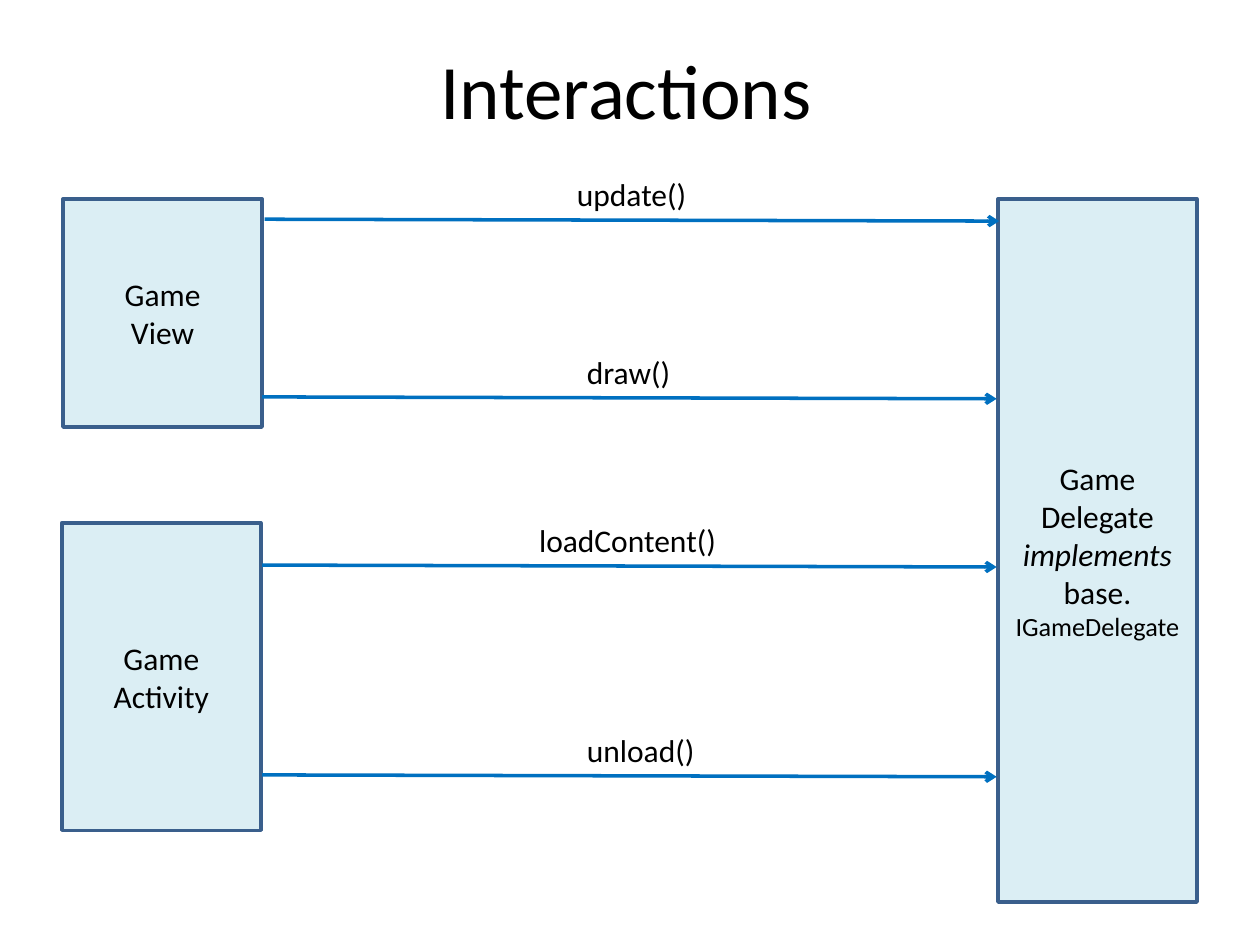
from dataclasses import dataclass

from lxml.etree import SubElement
from pptx import Presentation
from pptx.dml.color import RGBColor
from pptx.enum.shapes import MSO_CONNECTOR, MSO_SHAPE
from pptx.enum.text import MSO_ANCHOR, MSO_AUTO_SIZE, PP_ALIGN
from pptx.oxml.ns import qn
from pptx.slide import Slide
from pptx.text.text import TextFrame
from pptx.util import Inches, Length, Pt


@dataclass(frozen=True)
class Theme:
    font: str = "Calibri"
    ink: RGBColor = RGBColor(0x00, 0x00, 0x00)
    box_fill: RGBColor = RGBColor(0xDB, 0xEE, 0xF4)
    box_line: RGBColor = RGBColor(0x3A, 0x5F, 0x8C)
    arrow: RGBColor = RGBColor(0x00, 0x70, 0xC0)
    line_width: float = 2
    title_size: float = 44
    body_size: float = 18
    small_size: float = 15


@dataclass(frozen=True)
class Area:
    column: float
    row: float
    columns: float
    rows: float


@dataclass(frozen=True)
class Component:
    area: Area
    lines: tuple[str, ...]
    italic: str = ""
    small: str = ""


@dataclass(frozen=True)
class Call:
    name: str
    row: float
    label_column: float
    label_columns: float
    start: float = 4.16
    end: float = 15.82
    drop: float = 0.03


THEME = Theme()
COLUMNS, ROWS = 20, 15
WIDTH, HEIGHT = Inches(10), Inches(7.5)
LABEL_ROWS = 0.8
BOX_COLUMNS = 3.16

TITLE_AREA = Area(0.94, 0.16, 18, 2.5)
COMPONENTS = (
    Component(
        Area(15.84, 3.16, BOX_COLUMNS, 11.16),
        ("Game", "Delegate", "implements", "base.", "IGameDelegate"),
        italic="implements",
        small="IGameDelegate",
    ),
    Component(Area(1, 3.16, BOX_COLUMNS, 3.62), ("Game", "View")),
    Component(Area(0.98, 8.3, BOX_COLUMNS, 4.88), ("Game", "Activity")),
)
CALLS = (
    Call("update()", 3.48, 8.96, 2.16, start=4.2, end=15.86),
    Call("draw()", 6.3, 9.12, 1.74),
    Call("loadContent()", 8.97, 8.36, 3.24),
    Call("unload()", 12.3, 9.12, 2.14),
)


def across(columns: float) -> Length:
    """Return the width of a number of grid columns."""
    return Length(round(WIDTH * columns / COLUMNS))


def down(rows: float) -> Length:
    """Return the height of a number of grid rows."""
    return Length(round(HEIGHT * rows / ROWS))


def frame_of(area: Area) -> tuple[Length, Length, Length, Length]:
    """Return the left, top, width and height of a grid area."""
    return across(area.column), down(area.row), across(area.columns), down(area.rows)


def style_text(text_frame: TextFrame, size: float, align: PP_ALIGN) -> None:
    """Give every run in a text frame the theme's font and colour."""
    for para in text_frame.paragraphs:
        para.alignment = align
        for span in para.runs:
            span.font.name = THEME.font
            span.font.size = Pt(size)
            span.font.color.rgb = THEME.ink


def add_title(page: Slide, text: str) -> None:
    """Write the centred heading of the page."""
    box = page.shapes.add_textbox(*frame_of(TITLE_AREA))
    box.text_frame.text = text
    box.text_frame.word_wrap = True
    box.text_frame.vertical_anchor = MSO_ANCHOR.MIDDLE
    style_text(box.text_frame, THEME.title_size, PP_ALIGN.CENTER)


def add_component(page: Slide, component: Component) -> None:
    """Draw a component as a filled rectangle with centred text."""
    box = page.shapes.add_shape(MSO_SHAPE.RECTANGLE, *frame_of(component.area))
    box.shadow.inherit = False
    box.fill.solid()
    box.fill.fore_color.rgb = THEME.box_fill
    box.line.color.rgb = THEME.box_line
    box.line.width = Pt(THEME.line_width)
    box.text_frame.text = "\n".join(component.lines)
    box.text_frame.word_wrap = True
    box.text_frame.vertical_anchor = MSO_ANCHOR.MIDDLE
    style_text(box.text_frame, THEME.body_size, PP_ALIGN.CENTER)
    for para in box.text_frame.paragraphs:
        for span in para.runs:
            if span.text == component.italic:
                span.font.italic = True
            if span.text == component.small:
                span.font.size = Pt(THEME.small_size)


def add_call(page: Slide, call: Call) -> None:
    """Draw a method call as an arrow with its name above."""
    arrow = page.shapes.add_connector(
        MSO_CONNECTOR.STRAIGHT,
        across(call.start),
        down(call.row),
        across(call.end),
        down(call.row + call.drop),
    )
    arrow.line.color.rgb = THEME.arrow
    arrow.line.width = Pt(THEME.line_width)
    SubElement(arrow.line._get_or_add_ln(), qn("a:tailEnd"), type="arrow")
    SubElement(arrow._element.spPr, qn("a:effectLst"))

    area = Area(call.label_column, call.row - LABEL_ROWS, call.label_columns, LABEL_ROWS)
    label = page.shapes.add_textbox(*frame_of(area))
    label.text_frame.text = call.name
    label.text_frame.word_wrap = False
    label.text_frame.auto_size = MSO_AUTO_SIZE.SHAPE_TO_FIT_TEXT
    style_text(label.text_frame, THEME.body_size, PP_ALIGN.LEFT)


def main() -> None:
    """Build the interactions slide and save it."""
    deck = Presentation()
    deck.slide_width, deck.slide_height = WIDTH, HEIGHT
    page = deck.slides.add_slide(deck.slide_layouts[6])
    add_title(page, "Interactions")
    for component in COMPONENTS:
        add_component(page, component)
    for call in CALLS:
        add_call(page, call)
    deck.save("out.pptx")


if __name__ == "__main__":
    main()
